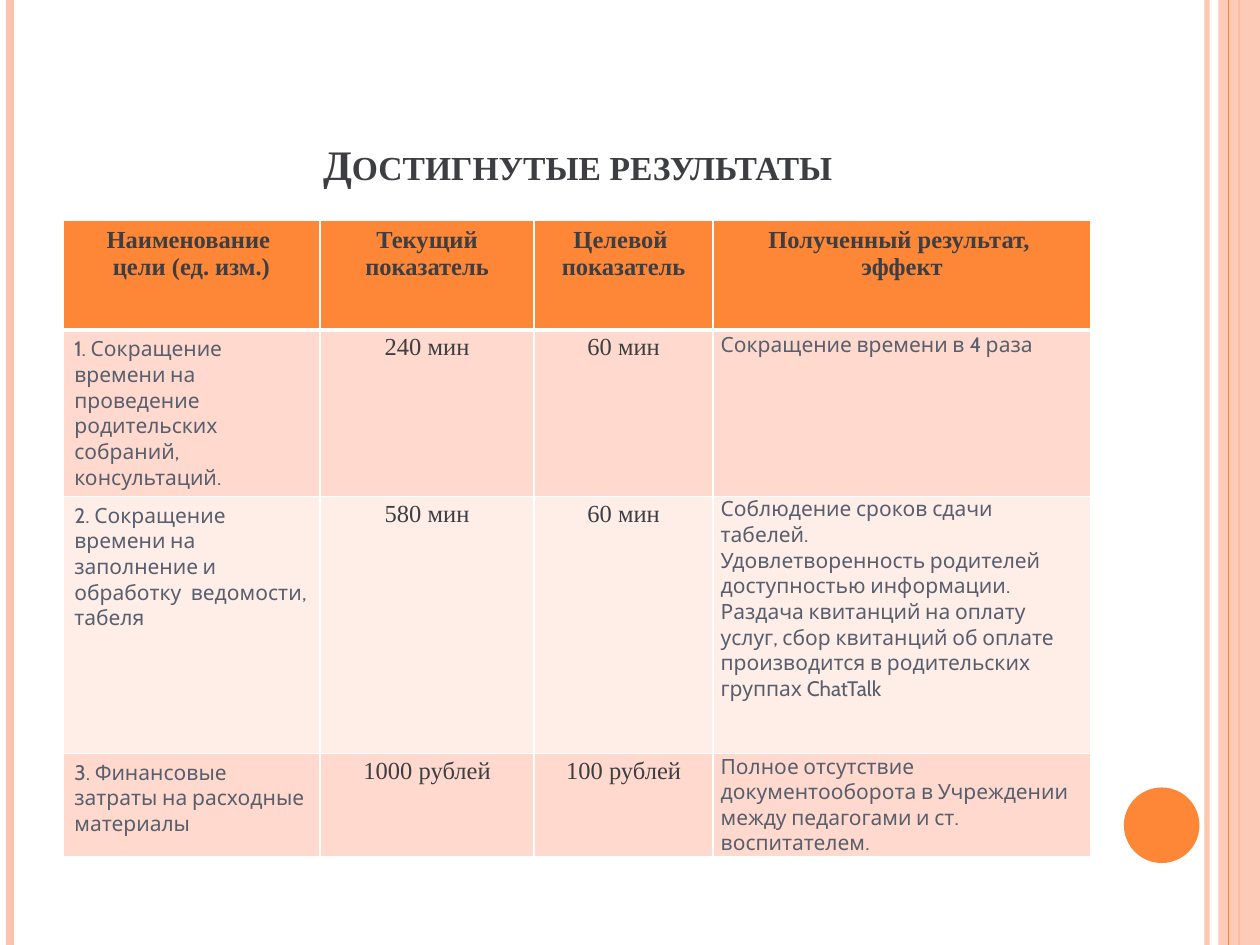
from dataclasses import dataclass

from lxml import etree
from pptx import Presentation
from pptx.dml.color import RGBColor
from pptx.enum.shapes import MSO_CONNECTOR, MSO_SHAPE
from pptx.enum.text import MSO_ANCHOR, MSO_AUTO_SIZE, PP_ALIGN
from pptx.oxml.ns import qn
from pptx.util import Inches, Pt

CENTER, LEFT = PP_ALIGN.CENTER, PP_ALIGN.LEFT
BOTTOM = MSO_ANCHOR.BOTTOM
NO_AUTOFIT = MSO_AUTO_SIZE.NONE
STRAIGHT = MSO_CONNECTOR.STRAIGHT
RECTANGLE, OVAL = MSO_SHAPE.RECTANGLE, MSO_SHAPE.OVAL
TOP_SIDE, BOTTOM_SIDE = 0, 2

COLORS = {
    "accent": "FE8637",
    "pale": "FEC3AE",
    "dark": "3C3E42",
    "slate": "575F6D",
    "band_odd": "FFD9CE",
    "band_even": "FFEDE8",
    "white": "FFFFFF",
}
SLIDE_HEIGHT = 7.5


@dataclass(frozen=True)
class Rule:
    x: float
    color: str
    width: float
    opacity: int = 100


@dataclass(frozen=True)
class TextStyle:
    font: dict
    color: str
    align: int
    spacing: float = 1.0


@dataclass(frozen=True)
class CellStyle:
    text: TextStyle
    margins: tuple


SERIF, SANS = "Times New Roman", "Cabin"
WIDE, NARROW = (0.09, 0.05), (0.06, 0)

TITLE = TextStyle({"name": SERIF, "size": Pt(24), "bold": True}, "dark", CENTER)
HEADING = TextStyle({"name": SERIF, "size": Pt(14), "bold": True}, "dark", CENTER)
FIGURE = TextStyle({"name": SERIF, "size": Pt(14), "bold": False}, "dark", CENTER, 1.15)
NOTE = TextStyle({"name": SANS, "size": Pt(12), "bold": False}, "slate", LEFT)
SHORT_NOTE = TextStyle(NOTE.font, NOTE.color, NOTE.align, 1.07)

HEADER_CELLS = [CellStyle(HEADING, WIDE)] * 4
GOAL, VALUE = CellStyle(NOTE, WIDE), CellStyle(FIGURE, NARROW)
BODY_CELLS = [GOAL, VALUE, VALUE, CellStyle(NOTE, NARROW)]
FIRST_BODY_CELLS = [GOAL, VALUE, VALUE, CellStyle(SHORT_NOTE, NARROW)]

UNDER_RULES = [Rule(9.58, "pale", 3, 93), Rule(0.08, "pale", 4.5)]
BAND_AXIS = Rule(9.83, "accent", 1.5)
TOP_RULE = Rule(9.75, "accent", 0.75)

COLUMN_WIDTHS = [2.04, 1.7, 1.42, 3]
ROW_HEIGHTS = [0.87, 1.32, 2.04, 0.81]
RESULTS = [
    ["Наименование \nцели (ед. изм.)", "Текущий показатель",
     "Целевой \nпоказатель", "Полученный результат, \nэффект"],
    ["1. Сокращение времени на проведение родительских собраний, консультаций.",
     "240 мин", "60 мин", "Сокращение времени в 4 раза"],
    ["2. Сокращение времени на заполнение и обработку  ведомости, табеля",
     "580 мин", "60 мин",
     "Соблюдение сроков сдачи табелей.\n"
     "Удовлетворенность родителей доступностью информации.\n"
     "Раздача квитанций на оплату услуг, сбор квитанций об оплате "
     "производится в родительских группах ChatTalk"],
    ["3. Финансовые затраты на расходные материалы", "1000 рублей", "100 рублей",
     "Полное отсутствие документооборота в Учреждении между педагогами "
     "и ст. воспитателем."],
]
ROW_STYLES = [HEADER_CELLS, FIRST_BODY_CELLS, BODY_CELLS, BODY_CELLS]
ROW_FILLS = ["accent", "band_odd", "band_even", "band_odd"]


def rgb(color: str) -> RGBColor:
    return RGBColor.from_string(COLORS[color])


def set_opacity(element, percent: int) -> None:
    for color in element.iter(qn("a:srgbClr")):
        etree.SubElement(color, qn("a:alpha"), val=str(percent * 1000))


def draw_rule(slide, rule: Rule):
    x = Inches(rule.x)
    line = slide.shapes.add_connector(STRAIGHT, x, 0, x, Inches(SLIDE_HEIGHT))
    line.line.color.rgb = rgb(rule.color)
    line.line.width = Pt(rule.width)
    properties = line._element.spPr
    if rule.opacity < 100:
        set_opacity(properties, rule.opacity)
    etree.SubElement(properties, qn("a:effectLst"))
    return line


def draw_shape(slide, preset: int, box: tuple, color: str):
    shape = slide.shapes.add_shape(preset, *map(Inches, box))
    shape.shadow.inherit = False
    shape.fill.solid()
    shape.fill.fore_color.rgb = rgb(color)
    shape.line.fill.background()
    return shape


def write_text(frame, text: str, style: TextStyle) -> None:
    frame.text = text
    for paragraph in frame.paragraphs:
        paragraph.alignment = style.align
        paragraph.line_spacing = style.spacing
        for run in paragraph.runs:
            for attribute, value in style.font.items():
                setattr(run.font, attribute, value)
            run.font.color.rgb = rgb(style.color)


def draw_borders(cell, bottom: float, top: float) -> None:
    properties = cell._tc.get_or_add_tcPr()
    for side, width in {"lnL": 1, "lnR": 1, "lnT": top, "lnB": bottom}.items():
        border = etree.SubElement(properties, qn(f"a:{side}"), w=str(Pt(width)))
        fill = etree.SubElement(border, qn("a:solidFill"))
        etree.SubElement(fill, qn("a:srgbClr"), val=COLORS["white"])


def draw_title(slide) -> None:
    title = slide.shapes.title
    box = {"left": 0.5, "top": 0.3, "width": 8.17, "height": 1.25}
    for attribute, value in box.items():
        setattr(title, attribute, Inches(value))
    frame = title.text_frame
    write_text(frame, "Достигнутые результаты", TITLE)
    frame.auto_size = NO_AUTOFIT
    frame.vertical_anchor = BOTTOM
    frame.paragraphs[0].runs[0]._r.get_or_add_rPr().set("cap", "small")


def draw_results(slide) -> None:
    box = map(Inches, (0.5, 1.75, sum(COLUMN_WIDTHS), sum(ROW_HEIGHTS)))
    table = slide.shapes.add_table(len(RESULTS), len(COLUMN_WIDTHS), *box).table
    table.horz_banding = False
    for column, width in zip(table.columns, COLUMN_WIDTHS):
        column.width = Inches(width)
    for index, (row, height) in enumerate(zip(table.rows, ROW_HEIGHTS)):
        row.height = Inches(height)
        for cell, text, style in zip(row.cells, RESULTS[index], ROW_STYLES[index]):
            draw_borders(cell, 3 if index == 0 else 1, 3 if index == 1 else 1)
            cell.fill.solid()
            cell.fill.fore_color.rgb = rgb(ROW_FILLS[index])
            side, edge = map(Inches, style.margins)
            margins = {"margin_left": side, "margin_right": side,
                       "margin_top": edge, "margin_bottom": edge}
            for attribute, value in margins.items():
                setattr(cell, attribute, value)
            write_text(cell.text_frame, text, style.text)


def main() -> None:
    presentation = Presentation()
    presentation.slide_width = Inches(10)
    presentation.slide_height = Inches(SLIDE_HEIGHT)
    slide = presentation.slides.add_slide(presentation.slide_layouts[5])
    for rule in UNDER_RULES:
        draw_rule(slide, rule)
    band_axis = draw_rule(slide, BAND_AXIS)
    band = draw_shape(slide, RECTANGLE, (9.67, 0, 0.33, SLIDE_HEIGHT), "pale")
    set_opacity(band._element.spPr, 87)
    band_axis.begin_connect(band, TOP_SIDE)
    band_axis.end_connect(band, BOTTOM_SIDE)
    draw_rule(slide, TOP_RULE)
    draw_shape(slide, OVAL, (8.92, 6.25, 0.6, 0.6), "accent")
    draw_title(slide)
    draw_results(slide)
    presentation.save("out.pptx")


if __name__ == "__main__":
    main()
